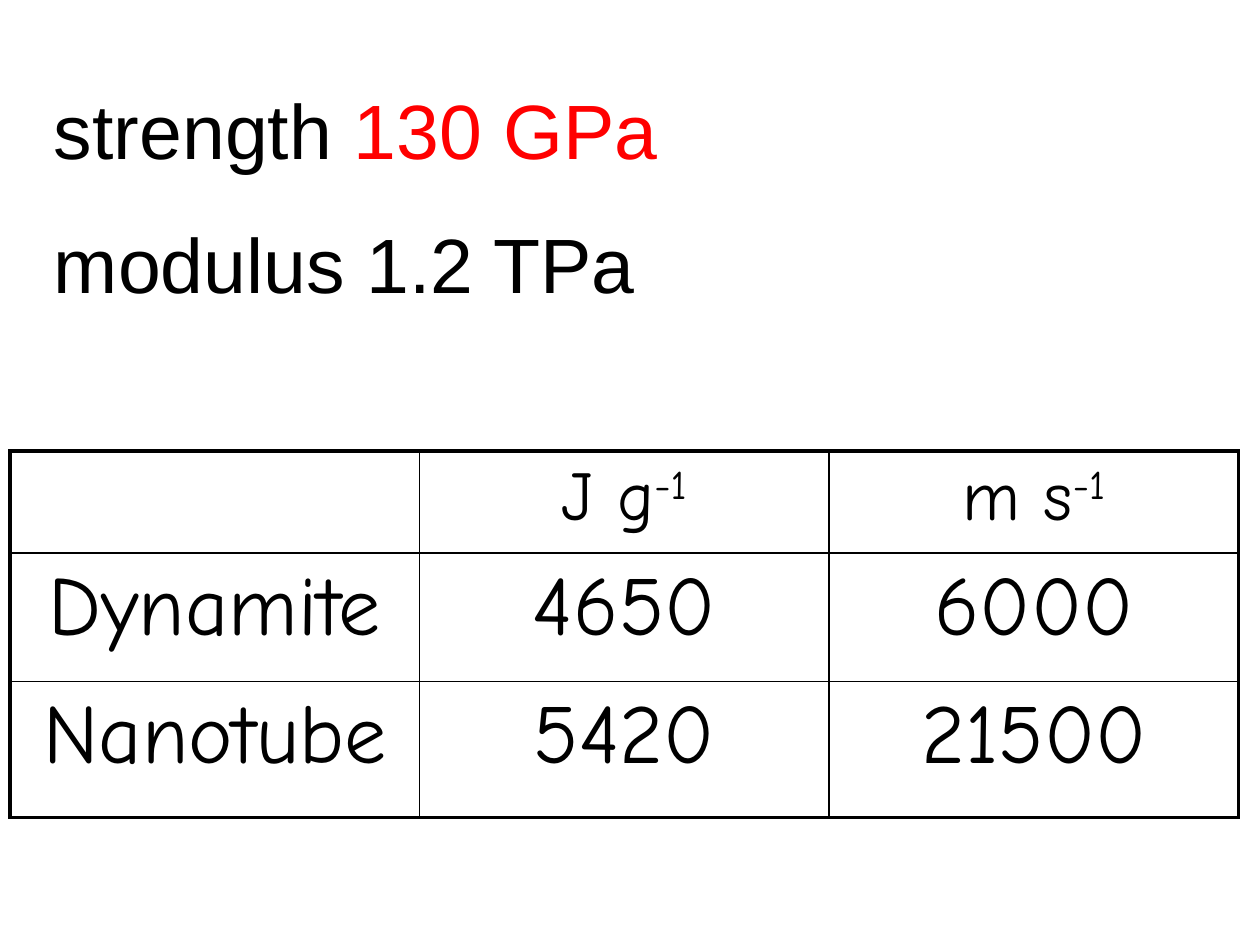
from dataclasses import dataclass

from lxml.etree import SubElement
from pptx import Presentation
from pptx.dml.color import RGBColor
from pptx.enum.text import MSO_ANCHOR as Anchor, PP_ALIGN as Align
from pptx.oxml.ns import qn
from pptx.util import Inches, Pt

BLACK, RED, WHITE = "000000", "FF0000", "FFFFFF"
THICK, THIN = 2.25, 1


@dataclass
class Entry:
    text: str = ""
    exponent: str = ""
    size: float = 48


TABLE_ROWS = [
    [Entry(), Entry("J g", "-1", 40), Entry("m s", "-1", 40)],
    [Entry("Dynamite"), Entry("4650"), Entry("6000")],
    [Entry("Nanotube"), Entry("5420"), Entry("21500")],
]
ROW_HEIGHTS = [0.81, 1.02, 1.08]
COLUMN_WIDTH = 3.25


def rgb(value: str) -> RGBColor:
    return RGBColor.from_string(value)


def add_text(paragraph, text: str, *, size: float, font: str,
             color: str = BLACK, baseline: int = 0) -> None:
    run = paragraph.add_run()
    run.text = text
    run.font.size = Pt(size)
    run.font.name = font
    run.font.color.rgb = rgb(color)
    if baseline:
        run.font._element.set("baseline", str(baseline * 1000))


def set_borders(cell, widths: dict[str, float]) -> None:
    properties = cell._tc.get_or_add_tcPr()
    for index, (side, width) in enumerate(widths.items()):
        line = SubElement(properties, qn(f"a:ln{side}"), w=str(Pt(width)))
        fill = SubElement(line, qn("a:solidFill"))
        SubElement(fill, qn("a:srgbClr"), val=BLACK)
        # Borders come before the cell fill
        properties.insert(index, line)


def fill_cell(cell, entry: Entry) -> None:
    cell.fill.solid()
    cell.fill.fore_color.rgb = rgb(WHITE)
    paragraph = cell.text_frame.paragraphs[0]
    paragraph.alignment = Align.CENTER
    if entry.text:
        add_text(paragraph, entry.text, size=entry.size, font="Comic Neue")
    if entry.exponent:
        add_text(paragraph, entry.exponent, size=entry.size,
                 font="Comic Neue", baseline=30)


def add_properties(slide) -> None:
    box = slide.shapes.add_textbox(Inches(0.33), Inches(0.58),
                                   Inches(5.25), Inches(1.95))
    box.fill.solid()
    box.fill.fore_color.rgb = rgb(WHITE)
    frame = box.text_frame
    frame.word_wrap = True
    frame.vertical_anchor = Anchor.MIDDLE
    strength = frame.paragraphs[0]
    add_text(strength, "strength ", size=44, font="Arial")
    add_text(strength, "130 GPa", size=44, font="Arial", color=RED)
    modulus = frame.add_paragraph()
    modulus.space_before = Pt(24)
    add_text(modulus, "modulus 1.2 TPa", size=44, font="Arial")


def add_energy_table(slide) -> None:
    last_row, last_column = len(TABLE_ROWS) - 1, len(TABLE_ROWS[0]) - 1
    table = slide.shapes.add_table(
        last_row + 1, last_column + 1, Inches(0.08), Inches(3.58),
        Inches(COLUMN_WIDTH * (last_column + 1)), Inches(sum(ROW_HEIGHTS))).table
    table.first_row = table.horz_banding = False
    for column in table.columns:
        column.width = Inches(COLUMN_WIDTH)
    for r, (entries, height) in enumerate(zip(TABLE_ROWS, ROW_HEIGHTS)):
        table.rows[r].height = Inches(height)
        for c, entry in enumerate(entries):
            cell = table.cell(r, c)
            fill_cell(cell, entry)
            # Thick frame outside, thin rules inside
            set_borders(cell, {
                "L": THICK if c == 0 else THIN,
                "R": THICK if c == last_column else THIN,
                "T": THICK if r == 0 else THIN,
                "B": THICK if r == last_row else THIN,
            })


def main() -> None:
    deck = Presentation()
    deck.slide_width, deck.slide_height = Inches(10), Inches(7.5)
    slide = deck.slides.add_slide(deck.slide_layouts[6])
    add_properties(slide)
    add_energy_table(slide)
    deck.save("out.pptx")


if __name__ == "__main__":
    main()
